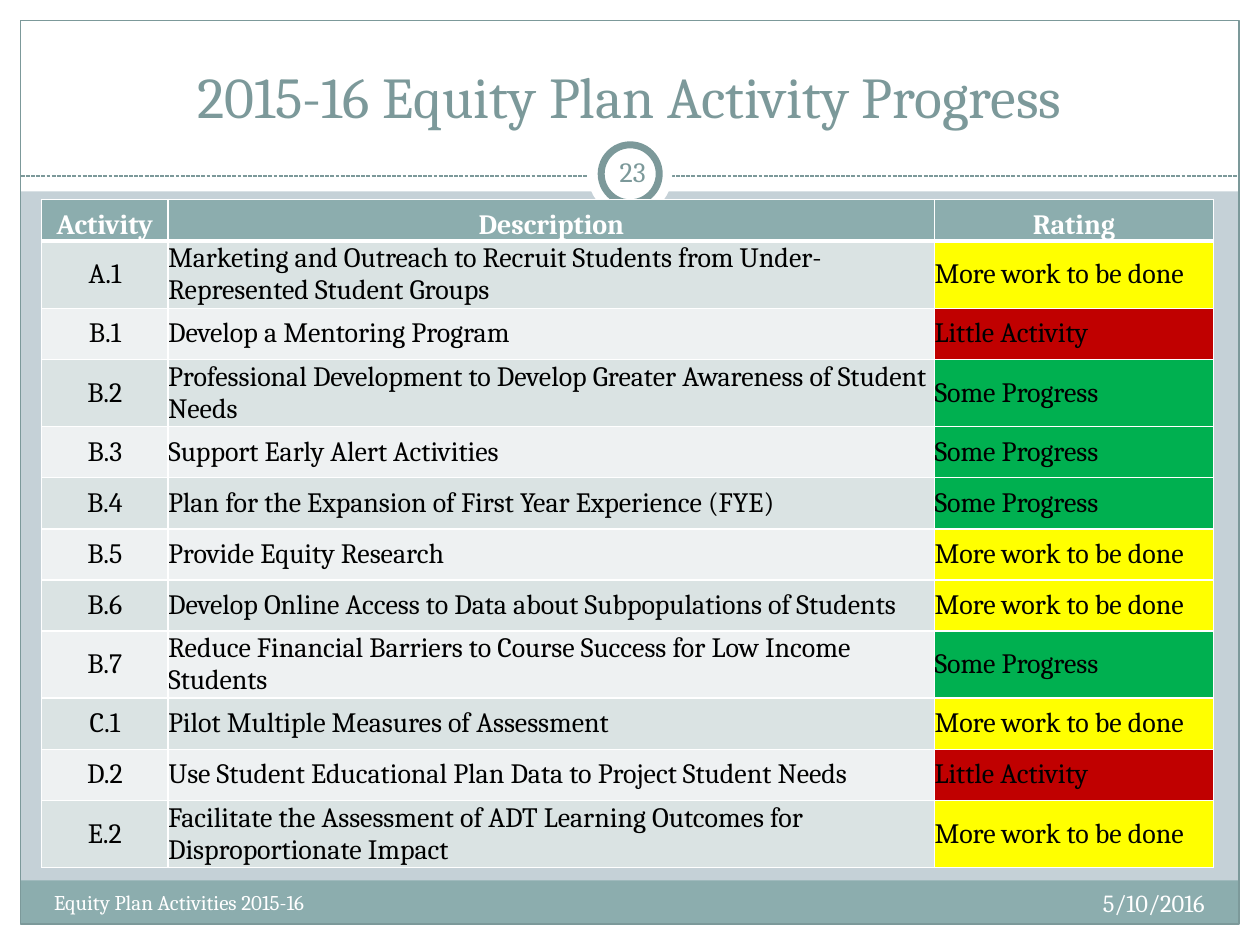
from lxml import etree
from pptx import Presentation
from pptx.dml.color import RGBColor
from pptx.enum.dml import MSO_LINE
from pptx.enum.shapes import MSO_CONNECTOR, MSO_SHAPE
from pptx.enum.text import MSO_ANCHOR, MSO_AUTO_SIZE, PP_ALIGN
from pptx.oxml.ns import qn
from pptx.util import Cm, Pt

RECT, OVAL = MSO_SHAPE.RECTANGLE, MSO_SHAPE.OVAL
LEFT, CENTER, RIGHT = PP_ALIGN.LEFT, PP_ALIGN.CENTER, PP_ALIGN.RIGHT
TOP, MIDDLE, BOTTOM = MSO_ANCHOR.TOP, MSO_ANCHOR.MIDDLE, MSO_ANCHOR.BOTTOM
DASH = MSO_LINE.SQUARE_DOT
STRAIGHT = MSO_CONNECTOR.STRAIGHT
NO_FIT = MSO_AUTO_SIZE.NONE

WHITE = RGBColor(0xFF, 0xFF, 0xFF)
BLACK = RGBColor(0, 0, 0)
BACK = RGBColor(0xC5, 0xD1, 0xD7)
TEAL = RGBColor(0x8C, 0xAD, 0xAE)
SLATE = RGBColor(0x7C, 0x99, 0x9A)
BANDS = (RGBColor(0xDA, 0xE3, 0xE3), RGBColor(0xEE, 0xF1, 0xF2))

FONT = "Cambria"
WIDTH, HEIGHT, EDGE = 25.4, 19.05, 0.42

MORE, LITTLE, SOME = "More work to be done", "Little Activity", "Some Progress"
RATINGS = {
    MORE: RGBColor(0xFF, 0xFF, 0),
    LITTLE: RGBColor(0xC0, 0, 0),
    SOME: RGBColor(0, 0xB0, 0x50),
}
HEADS = ("Activity", "Description", "Rating")
ROWS = (
    ("A.1", "Marketing and Outreach to Recruit Students from Under-Represented Student Groups", MORE),
    ("B.1", "Develop a Mentoring Program", LITTLE),
    ("B.2", "Professional Development to Develop Greater Awareness of Student Needs", SOME),
    ("B.3", "Support Early Alert Activities", SOME),
    ("B.4", "Plan for the Expansion of First Year Experience (FYE)", SOME),
    ("B.5", "Provide Equity Research", MORE),
    ("B.6", "Develop Online Access to Data about Subpopulations of Students", MORE),
    ("B.7", "Reduce Financial Barriers to Course Success for Low Income Students", SOME),
    ("C.1", "Pilot Multiple Measures of Assessment", MORE),
    ("D.2", "Use Student Educational Plan Data to Project Student Needs", LITTLE),
    ("E.2", "Facilitate the Assessment of ADT Learning Outcomes for Disproportionate Impact", MORE),
)


def style(para, size, color, align=LEFT, bold=False):
    para.alignment = align
    font = para.font
    font.name, font.size, font.bold = FONT, Pt(size), bold
    font.color.rgb = color


def add_box(slide, kind, box, fill=None, line=None, weight=0.75):
    shape = slide.shapes.add_shape(kind, *map(Cm, box))
    shape.shadow.inherit = False
    if fill is None:
        shape.fill.background()
    else:
        shape.fill.solid()
        shape.fill.fore_color.rgb = fill
    if line is None:
        shape.line.fill.background()
    else:
        shape.line.color.rgb = line
        shape.line.width = Pt(weight)


def add_rule(slide, y):
    rule = slide.shapes.add_connector(
        STRAIGHT, Cm(EDGE), Cm(y), Cm(WIDTH - EDGE), Cm(y))
    rule.line.color.rgb = SLATE
    rule.line.width = Pt(0.75)
    rule.line.dash_style = DASH
    etree.SubElement(rule._element.spPr, qn("a:effectLst"))


def add_text(slide, box, text, size, color, align=LEFT, anchor=TOP, inset=None):
    frame = slide.shapes.add_textbox(*map(Cm, box)).text_frame
    frame.word_wrap = True
    frame.vertical_anchor = anchor
    if inset is not None:
        frame.margin_left = frame.margin_right = Cm(inset)
        frame.margin_top = frame.margin_bottom = Cm(inset)
    frame.text = text
    style(frame.paragraphs[0], size, color, align)


def set_title(slide, text):
    title = slide.shapes.title
    title.left, title.top, title.width, title.height = map(
        Cm, (0.84, 0.64, 23.7, 2.11))
    frame = title.text_frame
    frame.auto_size = NO_FIT
    frame.vertical_anchor = BOTTOM
    frame.text = text
    style(frame.paragraphs[0], 33, SLATE, CENTER)
    # Bring the title in front of the white bands
    slide.shapes._spTree.append(title._element)


def add_borders(cell, below):
    props = cell._tc.get_or_add_tcPr()
    sides = (("L", 1), ("R", 1), ("T", 1), ("B", below))
    for spot, (side, weight) in enumerate(sides):
        line = etree.Element(qn("a:ln" + side), w=str(Pt(weight)))
        fill = etree.SubElement(line, qn("a:solidFill"))
        etree.SubElement(fill, qn("a:srgbClr"), val=str(WHITE))
        props.insert(spot, line)


def fill_cell(cell, text, fill, align, head=False):
    cell.margin_left = cell.margin_right = 0
    cell.margin_top = cell.margin_bottom = 0
    cell.vertical_anchor = BOTTOM if head else MIDDLE
    cell.text = text
    style(cell.text_frame.paragraphs[0], 16,
          WHITE if head else BLACK, align, head)
    cell.fill.solid()
    cell.fill.fore_color.rgb = fill
    add_borders(cell, 3 if head else 1)


def add_grid(slide):
    widths, first, rest = (2.55, 15.45, 5.62), 0.84, 1.03
    table = slide.shapes.add_table(
        len(ROWS) + 1, len(HEADS), Cm(0.84), Cm(4.02),
        Cm(sum(widths)), Cm(first + rest * len(ROWS))).table
    for column, width in zip(table.columns, widths):
        column.width = Cm(width)
    for i, row in enumerate(table.rows):
        row.height = Cm(rest if i else first)
    for c, text in enumerate(HEADS):
        fill_cell(table.cell(0, c), text, TEAL, CENTER, head=True)
    for r, (code, task, rating) in enumerate(ROWS, 1):
        band = BANDS[(r - 1) % 2]
        fill_cell(table.cell(r, 0), code, band, CENTER)
        fill_cell(table.cell(r, 1), task, band, LEFT)
        fill_cell(table.cell(r, 2), rating, RATINGS[rating], LEFT)


def add_frame(slide):
    inner = WIDTH - 2 * EDGE
    # White margins and header band
    for box in ((0, HEIGHT - EDGE, WIDTH, EDGE), (0, 0, WIDTH, 3.86),
                (0, 0, EDGE, HEIGHT), (WIDTH - EDGE, 0, EDGE, HEIGHT)):
        add_box(slide, RECT, box, WHITE)
    # Footer band, outline and dashed rule
    add_box(slide, RECT, (EDGE, 17.75, inner, 0.87), TEAL)
    add_box(slide, RECT, (EDGE, EDGE, inner, HEIGHT - 2 * EDGE), line=SLATE)
    add_rule(slide, 3.55)
    # Number badge
    add_box(slide, OVAL, (11.85, 2.67, 1.7, 1.7), WHITE)
    add_box(slide, OVAL, (12.12, 2.92, 1.17, 1.17), WHITE, SLATE, 4)


def main():
    deck = Presentation()
    deck.slide_width, deck.slide_height = Cm(WIDTH), Cm(HEIGHT)
    slide = deck.slides.add_slide(deck.slide_layouts[5])
    slide.background.fill.solid()
    slide.background.fill.fore_color.rgb = BACK

    add_frame(slide)
    set_title(slide, "2015-16 Equity Plan Activity Progress")
    # Footer texts and slide number
    add_text(slide, (16.08, 17.78, 8.46, 1.02), "5/10/2016", 14, WHITE, RIGHT)
    add_text(slide, (0.84, 17.81, 9.96, 1.02),
             "Equity Plan Activities 2015-16", 12, WHITE)
    add_text(slide, (12.12, 2.84, 1.27, 1.22), "23", 16, SLATE,
             CENTER, MIDDLE, 0.13)
    add_grid(slide)
    deck.save("out.pptx")


if __name__ == "__main__":
    main()
